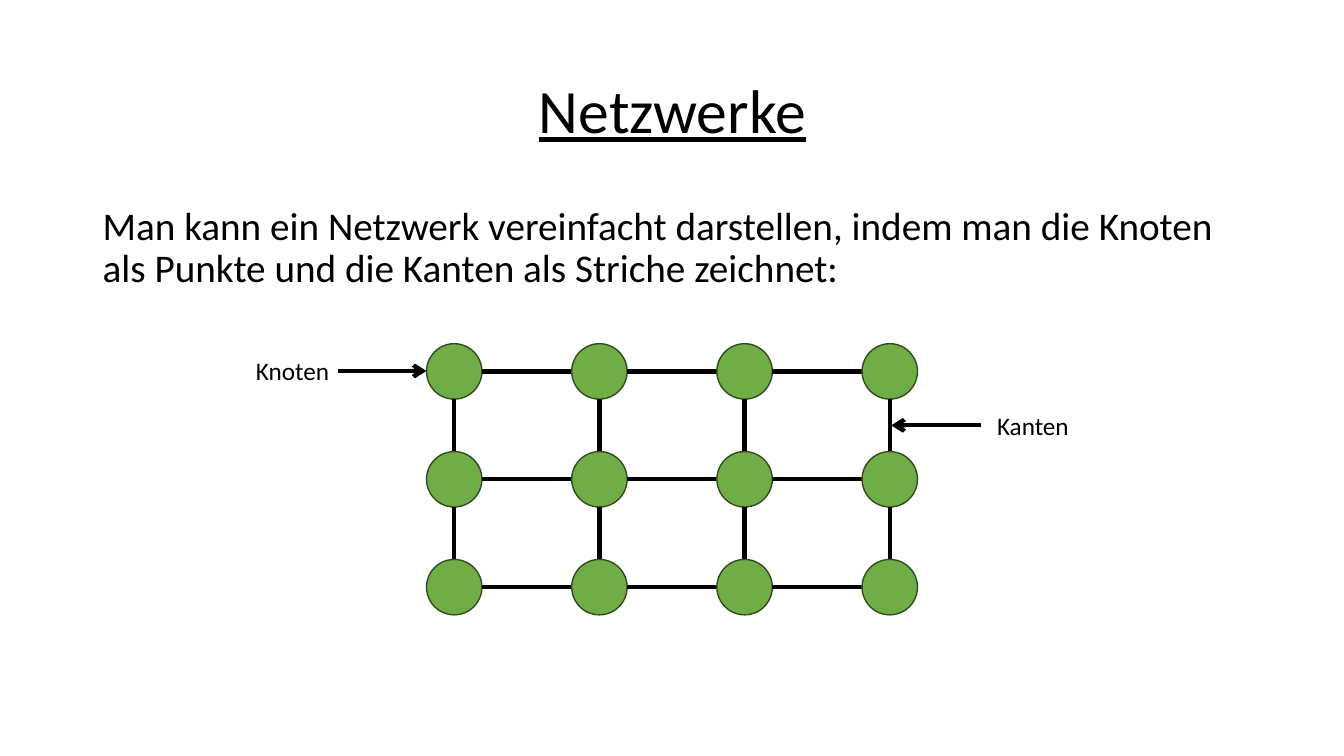
import pptx
import pptx.util
import pptx.dml.color
import pptx.enum.shapes
import pptx.enum.text
import pptx.oxml.ns
from lxml import etree

Inches = pptx.util.Inches
Pt = pptx.util.Pt
ALIGN = pptx.enum.text.PP_ALIGN
ANCHOR = pptx.enum.text.MSO_ANCHOR

# Content
TITLE = "Netzwerke"
BODY = ("Man kann ein Netzwerk vereinfacht darstellen, indem man die Knoten "
        "als Punkte und die Kanten als Striche zeichnet:")
LABELS = [("Knoten", 2.44, 3.48, 0.94), ("Kanten", 9.79, 4.02, 0.92)]
ARROWS = [((3.35, 3.68), (4.23, 3.68)), ((9.73, 4.22), (8.84, 4.22))]
COLORS = {"text": "000000", "edge": "000000", "node": "70AD47", "outline": "314C1F"}

# Node grid
COLUMNS, ROWS = 4, 3
GRID_LEFT, GRID_TOP = 4.23, 3.41
STEP_X, STEP_Y = 1.44, 1.07
NODE = 0.55


def color(name):
    return pptx.dml.color.RGBColor.from_string(COLORS[name])


def add_text(slide, text, box, size, wrap=True, spacing=None,
             align=ALIGN.LEFT, anchor=ANCHOR.TOP, underline=None):
    shape = slide.shapes.add_textbox(*map(Inches, box))
    frame = shape.text_frame
    frame.word_wrap = wrap
    frame.vertical_anchor = anchor
    paragraph = frame.paragraphs[0]
    paragraph.text = text
    paragraph.alignment = align
    paragraph.line_spacing = spacing
    font = paragraph.font
    font.name, font.size, font.underline = "Calibri", Pt(size), underline
    font.color.rgb = color("text")


def add_line(slide, start, end, arrow=False):
    connector = slide.shapes.add_connector(
        pptx.enum.shapes.MSO_CONNECTOR.STRAIGHT, *map(Inches, start + end))
    connector.line.color.rgb = color("edge")
    connector.line.width = Pt(3)
    if arrow:
        etree.SubElement(connector.line._get_or_add_ln(),
                         pptx.oxml.ns.qn("a:tailEnd"), type="arrow")
    etree.SubElement(connector._element.spPr, pptx.oxml.ns.qn("a:effectLst"))


def add_node(slide, left, top):
    shape = slide.shapes.add_shape(pptx.enum.shapes.MSO_SHAPE.OVAL,
                                   *map(Inches, (left, top, NODE, NODE)))
    shape.shadow.inherit = False
    shape.fill.solid()
    shape.fill.fore_color.rgb = color("node")
    shape.line.color.rgb = color("outline")
    shape.line.width = Pt(1)


def main():
    presentation = pptx.Presentation()
    presentation.slide_width = Inches(13.33)
    presentation.slide_height = Inches(7.5)
    slide = presentation.slides.add_slide(presentation.slide_layouts[6])

    # Title and explanation
    add_text(slide, TITLE, (0.92, 0.4, 11.5, 1.45), 44, spacing=0.9,
             align=ALIGN.CENTER, anchor=ANCHOR.MIDDLE, underline=True)
    add_text(slide, BODY, (0.92, 2, 11.5, 1.03), 28, spacing=0.9)

    # Nodes, each joined to its right and lower neighbour
    for row in range(ROWS):
        for column in range(COLUMNS):
            left = GRID_LEFT + column * STEP_X
            top = GRID_TOP + row * STEP_Y
            center_x, center_y = left + NODE / 2, top + NODE / 2
            add_node(slide, left, top)
            if column < COLUMNS - 1:
                add_line(slide, (left + NODE, center_y), (left + STEP_X, center_y))
            if row < ROWS - 1:
                add_line(slide, (center_x, top + NODE), (center_x, top + STEP_Y))

    # Labels and their arrows
    for start, end in ARROWS:
        add_line(slide, start, end, arrow=True)
    for text, left, top, width in LABELS:
        add_text(slide, text, (left, top, width, 0.4), 18, wrap=False)

    presentation.save("out.pptx")


if __name__ == "__main__":
    main()
